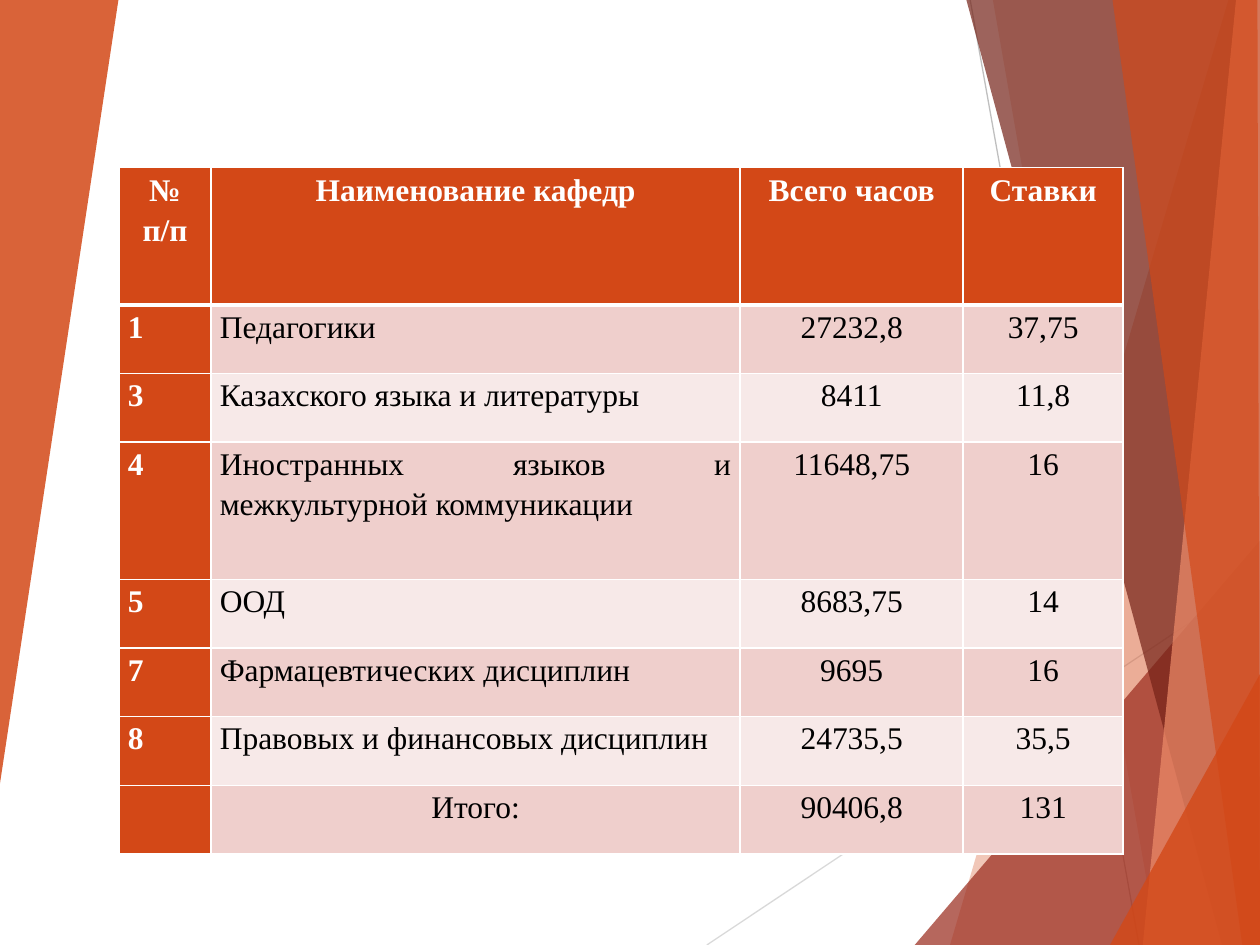
from dataclasses import dataclass

from lxml.etree import SubElement
from pptx import Presentation
from pptx.dml.color import RGBColor
from pptx.enum.shapes import MSO_CONNECTOR as Connector
from pptx.enum.text import PP_ALIGN as Align
from pptx.oxml.ns import qn
from pptx.util import Inches, Pt


@dataclass(frozen=True)
class Theme:
    font: str = "Times New Roman"
    size: int = 18
    spacing: float = 1.15
    accent: str = "D34817"
    brick: str = "9B2D1F"
    maroon: str = "742217"
    peach: str = "EF8C6A"
    band_dark: str = "EFCFCC"
    band_light: str = "F7E9E8"
    text: str = "000000"
    white: str = "FFFFFF"
    ray_light: str = "D9D9D9"
    ray_dark: str = "BFBFBF"
    ray_width: float = 0.75
    border: int = 1
    header_border: int = 3


@dataclass(frozen=True)
class Box:
    left: int
    top: int
    width: int
    height: int

    def point(self, x, y):
        return self.left + round(self.width * x / 100), self.top + round(self.height * y / 100)

    def region(self, x, y, width, height):
        return Box(*self.point(x, y), round(self.width * width / 100), round(self.height * height / 100))


THEME = Theme()

RAYS = [
    ((56.1, 100), (100, 60.93), THEME.ray_light),
    ((77, 0), (90.4, 100), THEME.ray_dark),
]
FACETS = [
    (THEME.accent, 30, [(97.5, 0), (75.4, 100), (100, 100), (100, 0)]),
    (THEME.accent, 20, [(78.8, 0), (91.9, 100), (100, 100), (100, 0)]),
    (THEME.brick, 72, [(72.6, 100), (100, 57.2), (100, 100)]),
    (THEME.maroon, 70, [(76.7, 0), (97, 100), (100, 100), (100, 0)]),
    (THEME.peach, 70, [(98.1, 0), (90.7, 100), (100, 100), (100, 0)]),
    (THEME.accent, 65, [(88.3, 0), (98.6, 100), (100, 100), (99.8, 0)]),
    (THEME.accent, 80, [(88.1, 100), (100, 71.33), (100, 100)]),
    (THEME.accent, 85, [(0, 0), (9.4, 0), (0, 82.93)]),
]

COLUMN_SHARES = [73, 420, 177, 127]
ROW_UNITS = [2, 1, 1, 2, 1, 1, 1, 1]
HEADER = ["№\nп/п", "Наименование кафедр", "Всего часов", "Ставки"]
DEPARTMENTS = [
    ["1", "Педагогики", "27232,8", "37,75"],
    ["3", "Казахского языка и литературы", "8411", "11,8"],
    ["4", "Иностранных языков и межкультурной коммуникации", "11648,75", "16"],
    ["5", "ООД", "8683,75", "14"],
    ["7", "Фармацевтических дисциплин", "9695", "16"],
    ["8", "Правовых и финансовых дисциплин", "24735,5", "35,5"],
]
TOTAL = ["", "Итого:", "90406,8", "131"]


def assign(target, values):
    for name, value in values.items():
        setattr(target, name, value)


def paint(fill, color):
    fill.solid()
    fill.fore_color.rgb = RGBColor.from_string(color)


def draw_ray(slide, box, start, end, color):
    ray = slide.shapes.add_connector(Connector.STRAIGHT, *box.point(*start), *box.point(*end))
    paint(ray.line.fill, color)
    ray.line.width = Pt(THEME.ray_width)
    SubElement(ray._element.spPr, qn("a:effectLst"))


def draw_facet(slide, box, color, opacity, corners):
    first, *rest = [box.point(*corner) for corner in corners]
    builder = slide.shapes.build_freeform(*first)
    builder.add_line_segments(rest, close=True)
    facet = builder.convert_to_shape()
    facet.shadow.inherit = False
    paint(facet.fill, color)
    facet.line.fill.background()
    tint = facet._element.spPr.find(qn("a:solidFill")).find(qn("a:srgbClr"))
    SubElement(tint, qn("a:alpha"), val=str(opacity * 1000))


def draw_backdrop(slide, box):
    for ray in RAYS:
        draw_ray(slide, box, *ray)
    for facet in FACETS:
        draw_facet(slide, box, *facet)


def draw_borders(cell, widths):
    properties = cell._tc.get_or_add_tcPr()
    for side, width in widths.items():
        edge = SubElement(properties, qn(f"a:ln{side}"), w=str(Pt(width)))
        SubElement(SubElement(edge, qn("a:solidFill")), qn("a:srgbClr"), val=THEME.white)


def fill_cell(cell, content, row, column):
    is_heading = row == 0 or column == 0
    is_total = row == len(DEPARTMENTS) + 1
    side = Inches(0.07)
    assign(cell, dict(margin_left=side, margin_right=side, margin_top=0, margin_bottom=0))
    thin, thick = THEME.border, THEME.header_border
    draw_borders(cell, dict(L=thin, R=thin, T=thick if row == 1 else thin, B=thick if row == 0 else thin))
    band = THEME.band_dark if row % 2 else THEME.band_light
    paint(cell.fill, THEME.accent if is_heading else band)
    cell.text = content
    centred = row == 0 or column > 1 or is_total
    for paragraph in cell.text_frame.paragraphs:
        assign(paragraph, dict(alignment=Align.CENTER if centred else Align.JUSTIFY,
                               line_spacing=THEME.spacing))
        assign(paragraph.font, dict(name=THEME.font, size=Pt(THEME.size), bold=is_heading))
        paragraph.font.color.rgb = RGBColor.from_string(THEME.white if is_heading else THEME.text)


def draw_workload(slide, box):
    records = [HEADER, *DEPARTMENTS, TOTAL]
    workload = slide.shapes.add_table(len(records), len(HEADER),
                                      box.left, box.top, box.width, box.height).table
    assign(workload, dict(first_row=True, first_col=True, horz_banding=False))
    for column, share in zip(workload.columns, COLUMN_SHARES):
        column.width = round(box.width * share / sum(COLUMN_SHARES))
    for row, units in zip(workload.rows, ROW_UNITS):
        row.height = round(box.height * units / sum(ROW_UNITS))
    for r, record in enumerate(records):
        for c, content in enumerate(record):
            fill_cell(workload.cell(r, c), content, r, c)


def main():
    deck = Presentation()
    assign(deck, dict(slide_width=Inches(10), slide_height=Inches(7.5)))
    slide = deck.slides.add_slide(deck.slide_layouts[6])
    paint(slide.background.fill, THEME.white)
    page = Box(0, 0, deck.slide_width, deck.slide_height)
    draw_backdrop(slide, page)
    draw_workload(slide, page.region(9.45, 17.75, 79.7, 72.65))
    deck.save("out.pptx")


if __name__ == "__main__":
    main()
